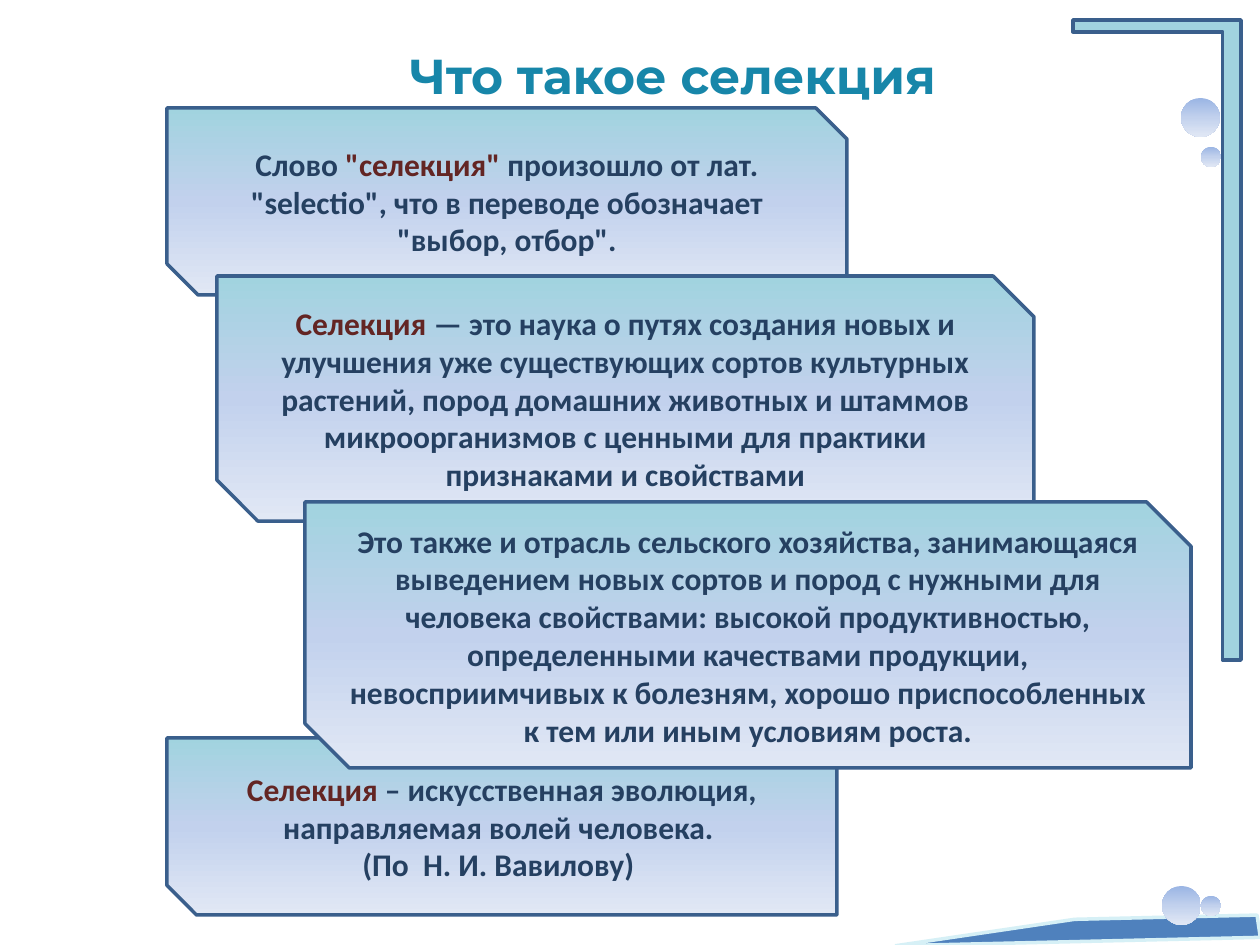
from copy import deepcopy

from pptx import Presentation
from pptx.dml.color import RGBColor
from pptx.enum.shapes import MSO_SHAPE
from pptx.enum.text import MSO_ANCHOR, PP_ALIGN
from pptx.util import Pt

PX = 914400 / 126  # EMU in one px

NAVY = RGBColor(0x25, 0x40, 0x61)
MAROON = RGBColor(0x63, 0x25, 0x23)
TEAL = RGBColor(0x17, 0x86, 0xA9)
AQUA = RGBColor(0xA1, 0xD3, 0xDF)
PERIWINKLE = RGBColor(0xC2, 0xD1, 0xED)
PALE = RGBColor(0xE1, 0xE8, 0xF5)
SKY = RGBColor(0x9A, 0xB5, 0xE4)
OUTLINE = RGBColor(0x3A, 0x5F, 0x8C)
BLUE = RGBColor(0x4F, 0x81, 0xBD)
ICE = RGBColor(0xD6, 0xF0, 0xF6)

TITLE = "Что такое селекция "
TITLE_BOX = (207, 39, 945, 444)

# Cards: box in px, then paragraphs of (text, colour) runs
AUTHOR_CARD = ((167, 738, 670, 177), [
    [("Селекция ", MAROON),
     ("– искусственная эволюция, направляемая волей человека. ", NAVY)],
    [("(По  Н. И. Вавилову) ", NAVY)],
])
DEFINITION_CARDS = [
    ((167, 108, 680, 187), [
        [("Слово ", NAVY), ('"селекция" ', MAROON),
         ('произошло от лат. "selectio", что в переводе обозначает '
          '"выбор, отбор".', NAVY)],
    ]),
    ((217, 276, 817, 245), [
        [("Селекция ", MAROON),
         ("— это наука о путях создания новых и улучшения уже существующих "
          "сортов культурных растений, пород домашних животных и штаммов "
          "микроорганизмов с ценными для практики признаками и свойствами",
          NAVY)],
    ]),
    ((305, 502, 886, 266), [
        [("Это также и отрасль сельского хозяйства, занимающаяся выведением "
          "новых сортов и пород с нужными для человека свойствами: высокой "
          "продуктивностью, определенными качествами продукции, "
          "невосприимчивых к болезням, хорошо приспособленных к тем или иным "
          "условиям роста.", NAVY)],
    ]),
]

CORNER_BOX = (1073, 20, 168, 640)
STRIPE_BOX = (897, 919, 362, 45)
BUBBLES = [(1162, 886, 39), (1201, 896, 20), (1201, 147, 20), (1181, 98, 39)]


def emu(box):
    return [round(v * PX) for v in box]


def add_shape(kind, box, line=None):
    sp = s.shapes.add_shape(kind, *emu(box))
    sp.shadow.inherit = False
    if line is None:
        sp.line.fill.background()
    else:
        sp.line.color.rgb = line
        sp.line.width = Pt(2)
    return sp


def fill_solid(sp, color):
    sp.fill.solid()
    sp.fill.fore_color.rgb = color


def fill_gradient(sp, top):
    sp.fill.gradient()
    sp.fill.gradient_angle = 270
    first = sp.fill.gradient_stops[0]._gs
    first.addnext(deepcopy(first))
    stops = zip(sp.fill.gradient_stops, (0, 0.5, 1), (top, PERIWINKLE, PALE))
    for stop, position, color in stops:
        stop.position = position
        stop.color.rgb = color


def add_run(p, text, font, size, color):
    r = p.add_run()
    r.text = text
    r.font.name = font
    r.font.size = Pt(size)
    r.font.bold = True
    r.font.color.rgb = color


def add_card(box, paragraphs):
    sp = add_shape(MSO_SHAPE.SNIP_2_DIAG_RECTANGLE, box, OUTLINE)
    fill_gradient(sp, AQUA)
    tf = sp.text_frame
    tf.word_wrap = True
    tf.vertical_anchor = MSO_ANCHOR.MIDDLE
    for i, runs in enumerate(paragraphs):
        p = tf.add_paragraph() if i else tf.paragraphs[0]
        p.alignment = PP_ALIGN.CENTER
        for text, color in runs:
            add_run(p, text, "Calibri", 18, color)


prs = Presentation()
prs.slide_width, prs.slide_height = emu((1260, 945))
s = prs.slides.add_slide(prs.slide_layouts[6])

# The author's card lies behind the others
add_card(*AUTHOR_CARD)

# Title
tf = s.shapes.add_textbox(*emu(TITLE_BOX)).text_frame
tf.word_wrap = True
p = tf.paragraphs[0]
p.alignment = PP_ALIGN.CENTER
add_run(p, TITLE, "Montserrat", 28, TEAL)

# Corner bracket: the half frame has the same two adjustments as the
# "corner" preset, which has no MSO_SHAPE member
corner = add_shape(MSO_SHAPE.HALF_FRAME, CORNER_BOX, OUTLINE)
corner.rotation = 180
corner.adjustments[0] = 0.07
corner.adjustments[1] = 0.11
corner._element.spPr.prstGeom.set("prst", "corner")
fill_solid(corner, AQUA)

# Bottom stripe and bubbles
stripe = add_shape(MSO_SHAPE.DIAGONAL_STRIPE, STRIPE_BOX, ICE)
stripe.rotation = 171.6
stripe._element.spPr.xfrm.set("flipV", "1")
fill_solid(stripe, BLUE)

for x, y, size in BUBBLES:
    fill_gradient(add_shape(MSO_SHAPE.OVAL, (x, y, size, size)), SKY)

# Definition cards, each overlapping the one before
for box, paragraphs in DEFINITION_CARDS:
    add_card(box, paragraphs)

prs.save("out.pptx")
